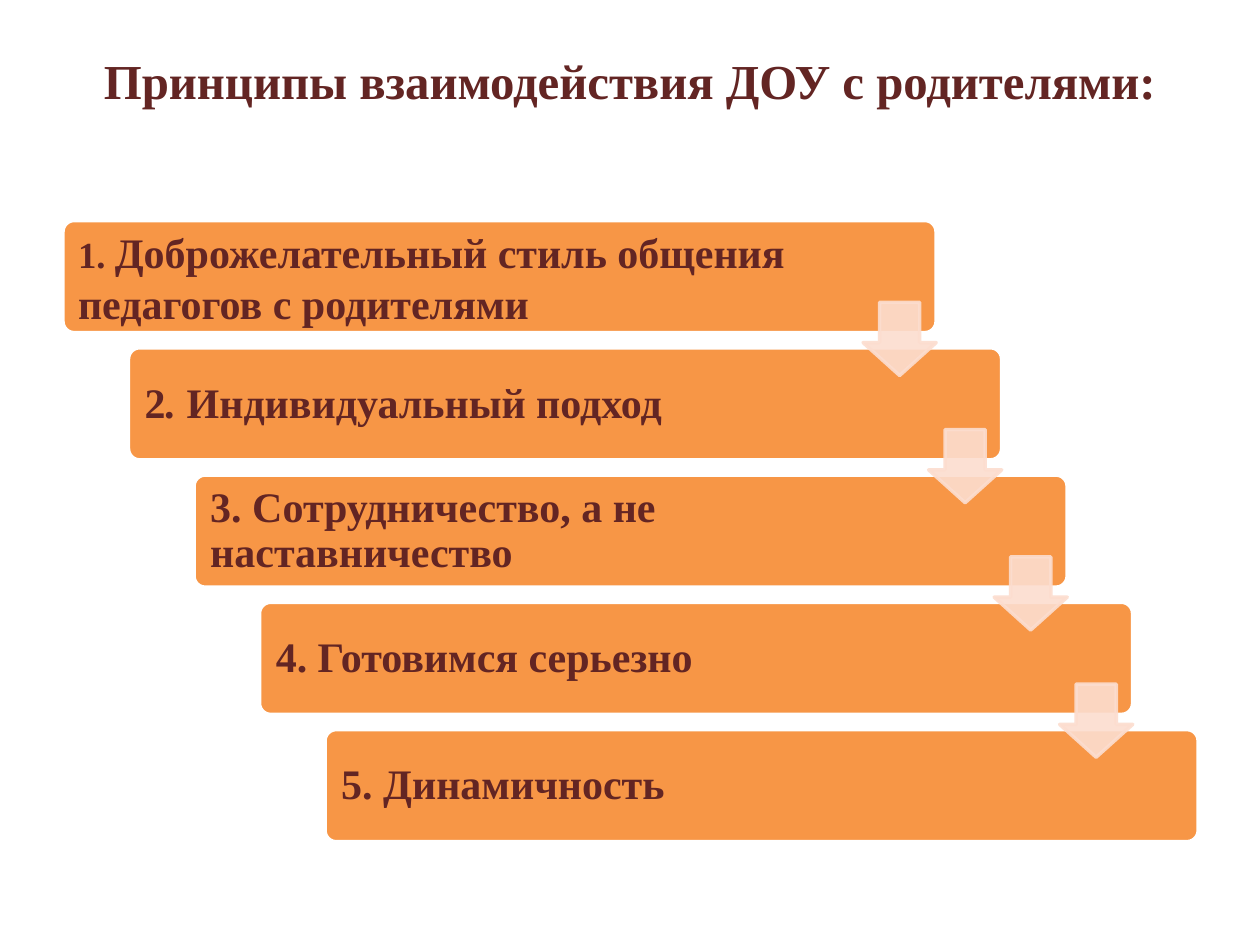
from dataclasses import dataclass

import pptx
import pptx.dml.color
import pptx.enum.shapes
import pptx.enum.text
import pptx.oxml.ns
import pptx.util
from lxml import etree
from pptx.util import Inches

MIDDLE = pptx.enum.text.MSO_ANCHOR.MIDDLE
SHAPES = pptx.enum.shapes.MSO_SHAPE


@dataclass(frozen=True)
class Theme:
    font: str = "Times New Roman"
    text: str = "632523"
    bar: str = "F79646"
    bar_line: str = "FFFFFF"
    arrow: str = "FCDDCF"
    arrow_opacity: int = 90
    line_width: float = 2
    title_size: float = 27.9
    body_size: float = 24
    small_size: float = 21


@dataclass(frozen=True)
class Span:
    text: str
    size: float
    italic: bool = False


@dataclass(frozen=True)
class Principle:
    spans: tuple[Span, ...]
    text_width: float = 5.78
    inset: float = 0.1
    line_spacing: float = 0.9


THEME = Theme()
BODY = THEME.body_size
TITLE = "Принципы взаимодействия ДОУ с родителями:"
PRINCIPLES = (
    Principle(
        (Span("1. ", THEME.small_size),
         Span("Доброжелательный стиль общения педагогов с родителями", BODY)),
        text_width=5.86, inset=0.09, line_spacing=1.0),
    Principle((Span("2", BODY), Span(". ", BODY, italic=True),
               Span("Индивидуальный подход", BODY))),
    Principle((Span("3. Сотрудничество, а не наставничество", BODY),)),
    Principle((Span("4. Готовимся серьезно", BODY),)),
    Principle((Span("5. Динамичность", BODY),)),
)

FIRST_LEFT, FIRST_TOP = 0.5, 1.75
STEP_X, STEP_Y = 0.52, 1.01
BAR_WIDTH, BAR_HEIGHT = 6.93, 0.89
TEXT_OFFSET, TEXT_HEIGHT = 0.03, 0.84
ARROW_SIZE, ARROW_DROP = 0.58, 0.65


def rgb(value: str) -> pptx.dml.color.RGBColor:
    return pptx.dml.color.RGBColor.from_string(value)


def step_corner(index: int) -> tuple[float, float]:
    """Top left corner of a bar on the staircase."""
    return FIRST_LEFT + index * STEP_X, FIRST_TOP + index * STEP_Y


def add_filled_shape(page, kind, left: float, top: float, width: float,
                     height: float, adjustments: tuple[float, ...],
                     fill: str, line: str):
    shape = page.shapes.add_shape(
        kind, Inches(left), Inches(top), Inches(width), Inches(height))
    for position, value in enumerate(adjustments):
        shape.adjustments[position] = value
    shape.shadow.inherit = False
    shape.fill.solid()
    shape.fill.fore_color.rgb = rgb(fill)
    shape.line.color.rgb = rgb(line)
    shape.line.width = pptx.util.Pt(THEME.line_width)
    return shape


def set_opacity(shape, percent: int) -> None:
    """Apply one opacity to both the fill and the line."""
    for color in shape.element.spPr.iter(pptx.oxml.ns.qn("a:srgbClr")):
        alpha = etree.SubElement(color, pptx.oxml.ns.qn("a:alpha"))
        alpha.set("val", str(percent * 1000))


def add_text_box(page, left: float, top: float, width: float, height: float,
                 inset: float):
    box = page.shapes.add_textbox(
        Inches(left), Inches(top), Inches(width), Inches(height))
    frame = box.text_frame
    frame.word_wrap = True
    frame.margin_left = frame.margin_right = Inches(inset)
    frame.margin_top = frame.margin_bottom = Inches(inset)
    para = frame.paragraphs[0]
    para.font.name = THEME.font
    para.font.bold = True
    para.font.color.rgb = rgb(THEME.text)
    return frame, para


def add_title(page) -> None:
    _, para = add_text_box(page, 0.5, 0.3, 9, 1.25, inset=0.1)
    para.text = TITLE
    para.alignment = pptx.enum.text.PP_ALIGN.CENTER
    para.font.size = pptx.util.Pt(THEME.title_size)


def add_principle(page, index: int, principle: Principle) -> None:
    left, top = step_corner(index)
    add_filled_shape(page, SHAPES.ROUNDED_RECTANGLE, left, top, BAR_WIDTH,
                     BAR_HEIGHT, (0.1,), THEME.bar, THEME.bar_line)
    frame, para = add_text_box(
        page, left + TEXT_OFFSET, top + TEXT_OFFSET, principle.text_width,
        TEXT_HEIGHT, principle.inset)
    frame.vertical_anchor = MIDDLE
    para.line_spacing = principle.line_spacing
    for span in principle.spans:
        run = para.add_run()
        run.text = span.text
        run.font.size = pptx.util.Pt(span.size)
        if span.italic:
            run.font.italic = True


def add_arrow(page, index: int) -> None:
    """Arrow from the right end of a bar down to the next bar."""
    left, top = step_corner(index)
    arrow = add_filled_shape(
        page, SHAPES.DOWN_ARROW, left + BAR_WIDTH - ARROW_SIZE,
        top + ARROW_DROP, ARROW_SIZE, ARROW_SIZE, (0.55, 0.45),
        THEME.arrow, THEME.arrow)
    # The arrow shape lists its shaft width first and its head length second.
    set_opacity(arrow, THEME.arrow_opacity)


def main() -> None:
    deck = pptx.Presentation()
    deck.slide_width, deck.slide_height = Inches(10), Inches(7.5)
    page = deck.slides.add_slide(deck.slide_layouts[6])
    add_title(page)
    for index, principle in enumerate(PRINCIPLES):
        add_principle(page, index, principle)
    for index in range(len(PRINCIPLES) - 1):
        add_arrow(page, index)
    deck.save("out.pptx")


if __name__ == "__main__":
    main()
